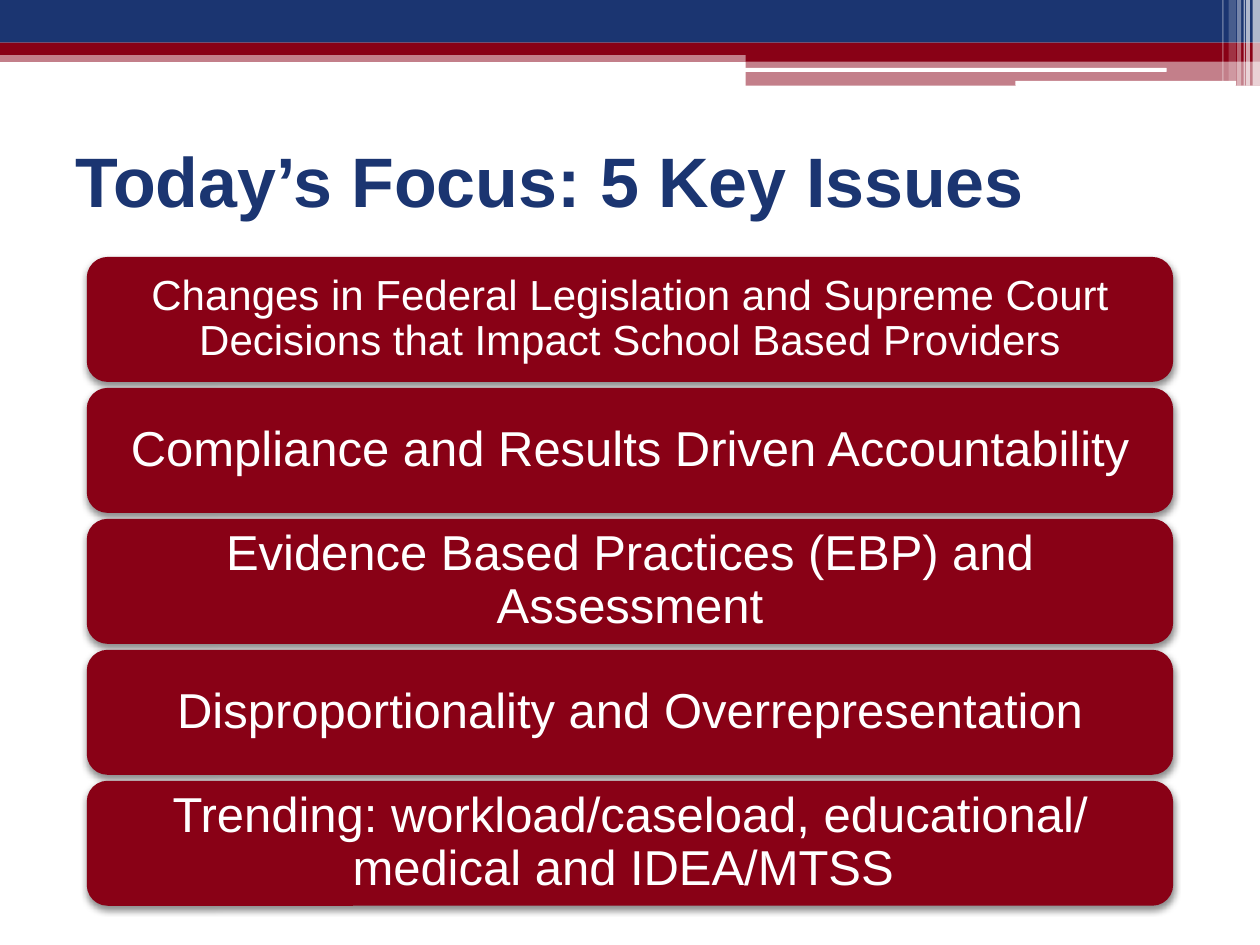
from lxml.etree import SubElement
from pptx import Presentation
from pptx.dml.color import RGBColor
from pptx.enum.shapes import MSO_SHAPE
from pptx.enum.text import MSO_ANCHOR, MSO_AUTO_SIZE, PP_ALIGN
from pptx.oxml import parse_xml
from pptx.oxml.ns import nsdecls, qn
from pptx.util import Cm, Pt

NAVY = RGBColor(0x1B, 0x35, 0x71)
RED = RGBColor(0x89, 0x01, 0x16)
WHITE = RGBColor(0xFF, 0xFF, 0xFF)

SHADOW = f"""<a:effectLst {nsdecls('a')}>
  <a:outerShdw blurRad="50800" dist="25400" dir="5400000" rotWithShape="0">
    <a:srgbClr val="000000"><a:alpha val="45000"/></a:srgbClr>
  </a:outerShdw>
</a:effectLst>"""

deck = Presentation()
deck.slide_width, deck.slide_height = Cm(25.4), Cm(19.05)
slide = deck.slides.add_slide(deck.slide_layouts[5])


def add_block(kind, left, top, width, height, color, alpha=100):
    """Add a borderless shape, sized in cm, with opacity in percent."""
    block = slide.shapes.add_shape(kind, Cm(left), Cm(top), Cm(width), Cm(height))
    block.shadow.inherit = False
    block.line.fill.background()
    block.fill.solid()
    block.fill.fore_color.rgb = color
    if alpha < 100:
        tint = block.fill._xPr.find(".//" + qn("a:srgbClr"))
        SubElement(tint, qn("a:alpha")).set("val", str(alpha * 1000))
    return block


# Header bands: left, top, width, height, color, opacity
bands = [
    (0, 1.02, 25.4, 0.23, RED, 50),
    (0, 0, 25.4, 0.86, NAVY, 100),
    (0, 0.86, 25.4, 0.25, RED, 100),
    (15.03, 0.99, 10.37, 0.25, RED, 100),
    (15.03, 1.23, 10.37, 0.5, RED, 50),
]
for band in bands:
    add_block(MSO_SHAPE.RECTANGLE, *band)

# White lines across the header
for left, top, width, height in [(15.01, 1.37, 8.51, 0.08), (20.47, 1.63, 4.45, 0.1)]:
    add_block(MSO_SHAPE.ROUNDED_RECTANGLE, left, top, width, height, WHITE)

# Upright stripes in the corner: left, width, height, opacity
stripes = [
    (25.25, 0.15, 1.73, 65),
    (25.12, 0.08, 1.73, 65),
    (25.07, 0.03, 1.73, 60),
    (24.94, 0.08, 1.73, 40),
    (24.77, 0.15, 1.63, 20),
    (24.64, 0.03, 1.63, 30),
]
for left, width, height, alpha in stripes:
    add_block(MSO_SHAPE.RECTANGLE, left, 0, width, height, WHITE, alpha)

title = slide.shapes.title
title.left, title.top, title.width, title.height = Cm(1.27), Cm(2.13), Cm(22.86), Cm(2.97)
frame = title.text_frame
frame.text = "Today’s Focus: 5 Key Issues"
frame.auto_size = MSO_AUTO_SIZE.NONE
frame.vertical_anchor = MSO_ANCHOR.MIDDLE
para = frame.paragraphs[0]
para.alignment = PP_ALIGN.LEFT
para.font.name, para.font.size, para.font.bold = "Arial", Pt(40), True
para.font.color.rgb = NAVY

issues = [
    ("Changes in Federal Legislation and Supreme Court Decisions that Impact School Based Providers", 24),
    ("Compliance and Results Driven Accountability", 28),
    ("Evidence Based Practices (EBP) and Assessment", 28),
    ("Disproportionality and Overrepresentation", 28),
    ("Trending: workload/caseload, educational/ medical and IDEA/MTSS ", 28),
]
for row, (text, size) in enumerate(issues):
    card = add_block(MSO_SHAPE.ROUNDED_RECTANGLE, 1.75, 5.18 + row * 2.64, 21.9, 2.52, RED)
    props = card.fill._xPr
    props.replace(props.find(qn("a:effectLst")), parse_xml(SHADOW))
    frame = card.text_frame
    frame.text = text
    frame.word_wrap = True
    frame.vertical_anchor = MSO_ANCHOR.MIDDLE
    frame.margin_left = frame.margin_right = Cm(0.3)
    frame.margin_top = frame.margin_bottom = Cm(0.15)
    para = frame.paragraphs[0]
    para.alignment = PP_ALIGN.CENTER
    para.line_spacing = 0.9
    para.font.name, para.font.size = "Arial", Pt(size)
    para.font.color.rgb = WHITE

deck.save("out.pptx")
